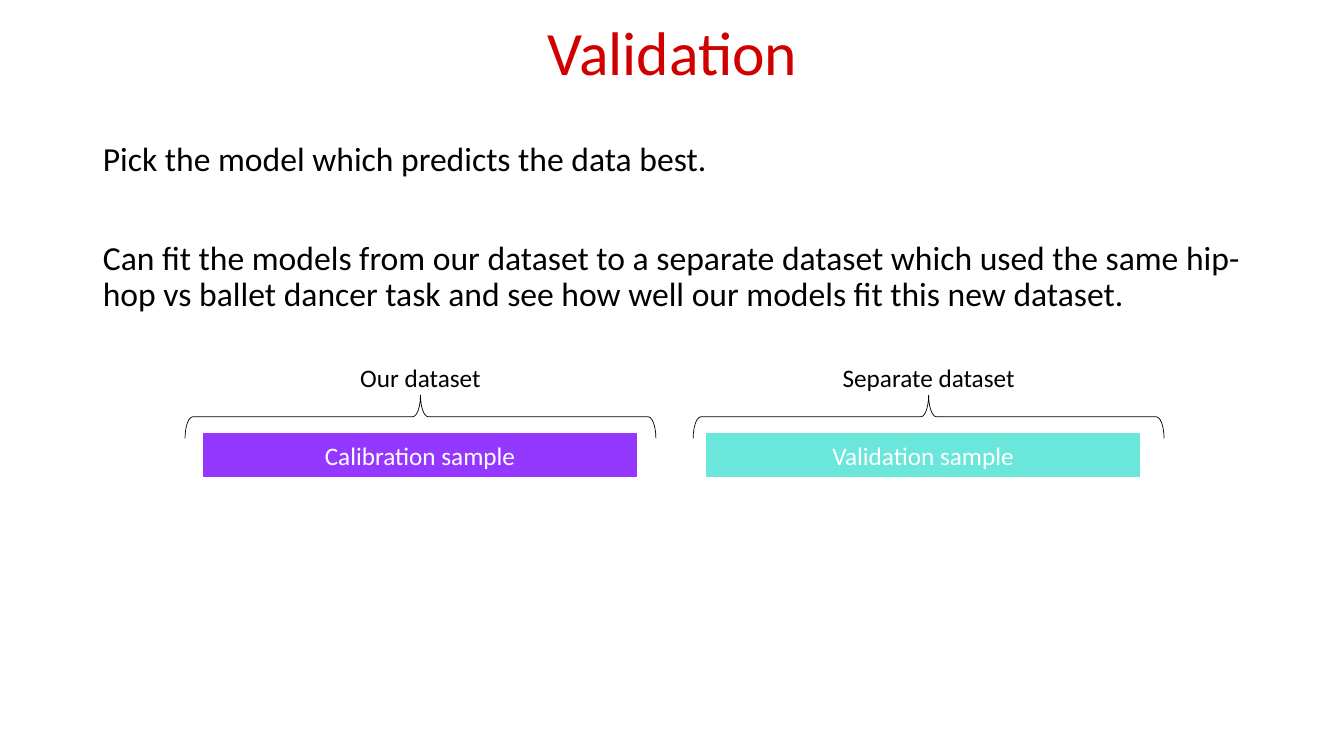
from pptx import Presentation
from pptx.dml.color import RGBColor
from pptx.enum.shapes import MSO_SHAPE
from pptx.enum.text import MSO_ANCHOR, MSO_AUTO_SIZE, PP_ALIGN
from pptx.util import Inches, Pt

COLORS = {
    "title": "D00000",
    "text": "000000",
    "calibration": "9437FF",
    "validation": "6AE6DA",
    "sample_text": "FFFFFF",
}


def write(tf, paragraphs, size=18, color="text", align=PP_ALIGN.CENTER,
          anchor=MSO_ANCHOR.TOP, line_spacing=1.0, space_before=(0,)):
    """Fill a text frame; space_before holds one value in points per paragraph."""
    tf.word_wrap = True
    tf.auto_size = MSO_AUTO_SIZE.NONE
    tf.vertical_anchor = anchor
    for i, (text, before) in enumerate(zip(paragraphs, space_before)):
        p = tf.paragraphs[0] if i == 0 else tf.add_paragraph()
        p.alignment = align
        p.line_spacing = line_spacing
        p.space_before = Pt(before)
        r = p.add_run()
        r.text = text
        r.font.name = "Calibri"
        r.font.size = Pt(size)
        r.font.color.rgb = RGBColor.from_string(COLORS[color])


def place(sp, left, top, width, height):
    sp.left, sp.top = Inches(left), Inches(top)
    sp.width, sp.height = Inches(width), Inches(height)


prs = Presentation()
prs.slide_width, prs.slide_height = Inches(13.33), Inches(7.5)
s = prs.slides.add_slide(prs.slide_layouts[1])

title = s.shapes.title
place(title, 0.38, -0.17, 12.58, 1.45)
write(title.text_frame, ["Validation"], size=44, color="title",
      anchor=MSO_ANCHOR.MIDDLE, line_spacing=0.9)

body = s.placeholders[1]
place(body, 0.92, 1.36, 11.5, 4.76)
write(body.text_frame, [
    "Pick the model which predicts the data best.",
    "Can fit the models from our dataset to a separate dataset which used "
    "the same hip-hop vs ballet dancer task and see how well our models fit "
    "this new dataset.",
], size=24, align=PP_ALIGN.LEFT, line_spacing=0.9, space_before=(10, 45))
for p in body.text_frame.paragraphs:
    pPr = p._p.get_or_add_pPr()
    pPr.set("marL", "0")
    pPr.set("indent", "0")
    pPr.append(pPr.makeelement(
        "{http://schemas.openxmlformats.org/drawingml/2006/main}buNone", {}))

# Each dataset: label, sample, colour, left of bar, centre of brace and label
datasets = [
    ("Our dataset", "Calibration sample", "calibration", 2.02, 4.17),
    ("Separate dataset", "Validation sample", "validation", 7.01, 9.21),
]
brace_w, brace_h, label_w = 0.43, 4.67, 1.92
for label, sample, color, bar_left, center in datasets:
    bar = s.shapes.add_shape(MSO_SHAPE.RECTANGLE, Inches(bar_left), Inches(4.3),
                             Inches(4.29), Inches(0.43))
    bar.shadow.inherit = False
    bar.fill.solid()
    bar.fill.fore_color.rgb = RGBColor.from_string(COLORS[color])
    bar.line.color.rgb = RGBColor.from_string(COLORS[color])
    bar.line.width = Pt(1)
    write(bar.text_frame, [sample], color="sample_text", anchor=MSO_ANCHOR.MIDDLE)

    brace = s.shapes.add_shape(MSO_SHAPE.LEFT_BRACE, Inches(center - brace_w / 2),
                               Inches(1.8), Inches(brace_w), Inches(brace_h))
    brace.rotation = 90
    brace.adjustments[0] = 0.18
    brace.shadow.inherit = False
    brace.fill.background()
    brace.line.color.rgb = RGBColor.from_string(COLORS["text"])
    brace.line.width = Pt(0.5)

    box = s.shapes.add_textbox(Inches(center - label_w / 2), Inches(3.55),
                               Inches(label_w), Inches(0.4))
    write(box.text_frame, [label])

prs.save("out.pptx")
